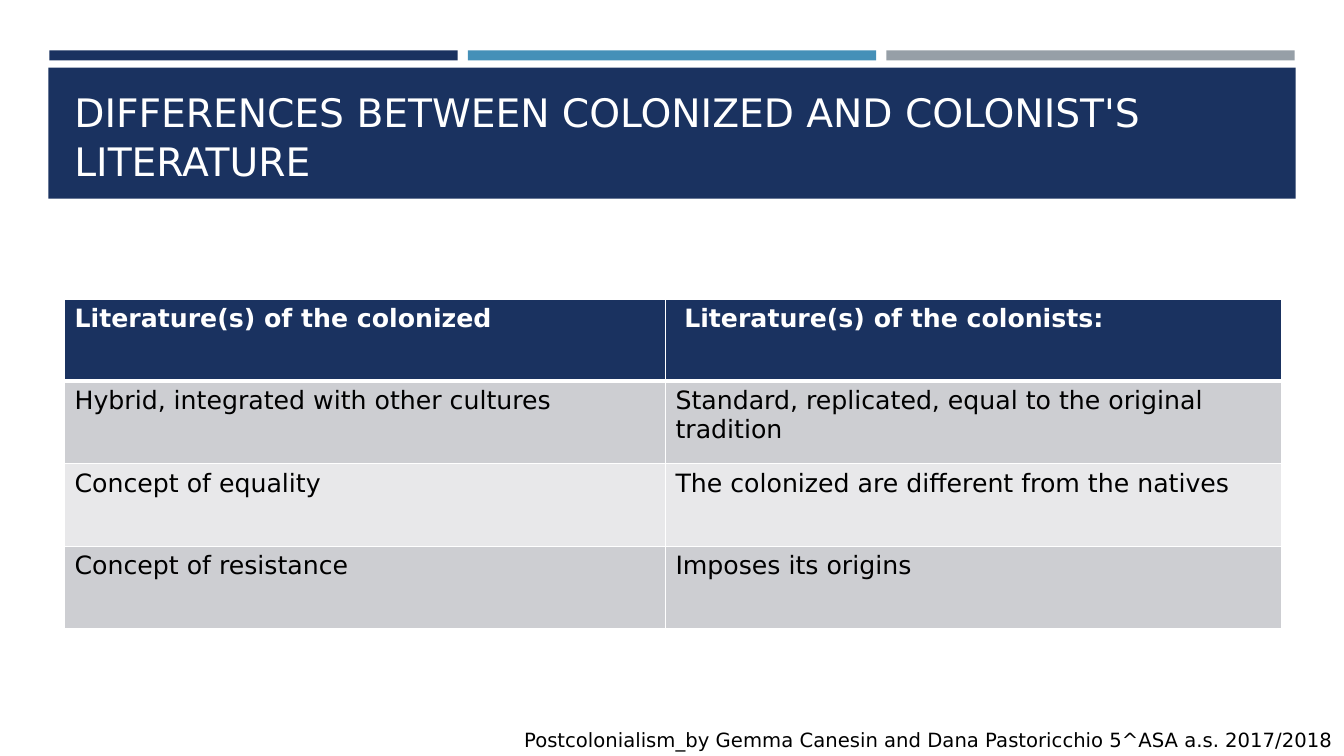
import dataclasses
import typing

import lxml.etree
import pptx
import pptx.dml.color
import pptx.enum.shapes
import pptx.enum.text
import pptx.oxml.ns
import pptx.util

Inches = pptx.util.Inches


@dataclasses.dataclass(frozen=True)
class Theme:
    font: str = "DejaVu Sans"
    navy: str = "1A3260"
    blue: str = "4590B8"
    grey: str = "969FA7"
    dark_band: str = "CDCED2"
    light_band: str = "E8E8EA"
    white: str = "FFFFFF"
    black: str = "000000"
    title_size: int = 28
    table_size: int = 18
    credit_size: int = 14


@dataclasses.dataclass(frozen=True)
class Bar:
    left: float
    top: float
    width: float
    height: float
    color: str


@dataclasses.dataclass(frozen=True)
class Label:
    left: float
    top: float
    width: float
    height: float
    text: str
    size: int
    color: str
    anchor: typing.Any
    wrap: bool
    line_spacing: float


THEME = Theme()
ANCHOR = pptx.enum.text.MSO_ANCHOR
BARS = [
    Bar(0.49 + 4.15 * index, 0.5, 4.05, 0.1, color)
    for index, color in enumerate((THEME.navy, THEME.blue, THEME.grey))
] + [Bar(0.48, 0.67, 12.37, 1.3, THEME.navy)]
LABELS = [
    Label(0.64, 0.77, 12.06, 1.11,
          "DIFFERENCES BETWEEN COLONIZED AND COLONIST'S LITERATURE",
          THEME.title_size, THEME.white, ANCHOR.BOTTOM, True, 1.05),
    Label(5.1, 7.17, 8.23, 0.34,
          "Postcolonialism_by Gemma Canesin and Dana Pastoricchio 5^ASA a.s. 2017/2018",
          THEME.credit_size, THEME.black, ANCHOR.TOP, False, 1.0),
]
COLUMN_WIDTHS = (5.96, 6.11)
ROW_HEIGHTS = (0.81, 0.82, 0.82, 0.82)
ROWS = [
    ("Literature(s) of the colonized", " Literature(s) of the colonists:"),
    ("Hybrid, integrated with other cultures",
     "Standard, replicated, equal to the original tradition"),
    ("Concept of equality", "The colonized are different from the natives"),
    ("Concept of resistance", "Imposes its origins"),
]


def rgb(color: str) -> pptx.dml.color.RGBColor:
    """Turn a hex string into a colour."""
    return pptx.dml.color.RGBColor.from_string(color)


def style_font(para: typing.Any, size: int, color: str, bold: bool = False) -> None:
    """Set the typeface, size, colour and weight of a paragraph."""
    para.font.name = THEME.font
    para.font.size = pptx.util.Pt(size)
    para.font.bold = bold
    para.font.color.rgb = rgb(color)


def draw_bar(page: typing.Any, bar: Bar) -> None:
    """Draw a plain filled rectangle."""
    shape = page.shapes.add_shape(
        pptx.enum.shapes.MSO_SHAPE.RECTANGLE,
        Inches(bar.left), Inches(bar.top), Inches(bar.width), Inches(bar.height))
    shape.shadow.inherit = False
    shape.fill.solid()
    shape.fill.fore_color.rgb = rgb(bar.color)
    shape.line.fill.background()


def draw_label(page: typing.Any, label: Label) -> None:
    """Draw a text box holding one paragraph."""
    box = page.shapes.add_textbox(
        Inches(label.left), Inches(label.top), Inches(label.width), Inches(label.height))
    frame = box.text_frame
    frame.word_wrap = label.wrap
    frame.vertical_anchor = label.anchor
    para = frame.paragraphs[0]
    para.text = label.text
    para.line_spacing = label.line_spacing
    style_font(para, label.size, label.color)


def set_borders(cell: typing.Any, bottom: int) -> None:
    """Give a cell white borders, with its own width at the bottom."""
    qn = pptx.oxml.ns.qn
    properties = cell._tc.get_or_add_tcPr()
    widths = {"a:lnL": 1, "a:lnR": 1, "a:lnT": 1, "a:lnB": bottom}
    for index, (tag, width) in enumerate(widths.items()):
        line = lxml.etree.Element(qn(tag), w=str(pptx.util.Pt(width)))
        fill = lxml.etree.SubElement(line, qn("a:solidFill"))
        lxml.etree.SubElement(fill, qn("a:srgbClr"), val=THEME.white)
        properties.insert(index, line)


def draw_table(page: typing.Any) -> None:
    """Draw the comparison table with a header and banded rows."""
    table = page.shapes.add_table(
        len(ROWS), len(COLUMN_WIDTHS), Inches(0.64), Inches(2.97),
        Inches(sum(COLUMN_WIDTHS)), Inches(sum(ROW_HEIGHTS))).table
    for column, width in zip(table.columns, COLUMN_WIDTHS):
        column.width = Inches(width)
    for row_index, (row, height, texts) in enumerate(zip(table.rows, ROW_HEIGHTS, ROWS)):
        row.height = Inches(height)
        header = row_index == 0
        band = THEME.dark_band if row_index % 2 else THEME.light_band
        for cell, text in zip(row.cells, texts):
            cell.fill.solid()
            cell.fill.fore_color.rgb = rgb(THEME.navy if header else band)
            para = cell.text_frame.paragraphs[0]
            para.text = text
            style_font(para, THEME.table_size, THEME.white if header else THEME.black, header)
            set_borders(cell, 3 if header else 1)


def main() -> None:
    """Build the slide and save the deck."""
    deck = pptx.Presentation()
    deck.slide_width = Inches(13.33)
    deck.slide_height = Inches(7.5)
    page = deck.slides.add_slide(deck.slide_layouts[6])
    for bar in BARS:
        draw_bar(page, bar)
    for label in LABELS:
        draw_label(page, label)
    draw_table(page)
    deck.save("out.pptx")


if __name__ == "__main__":
    main()
